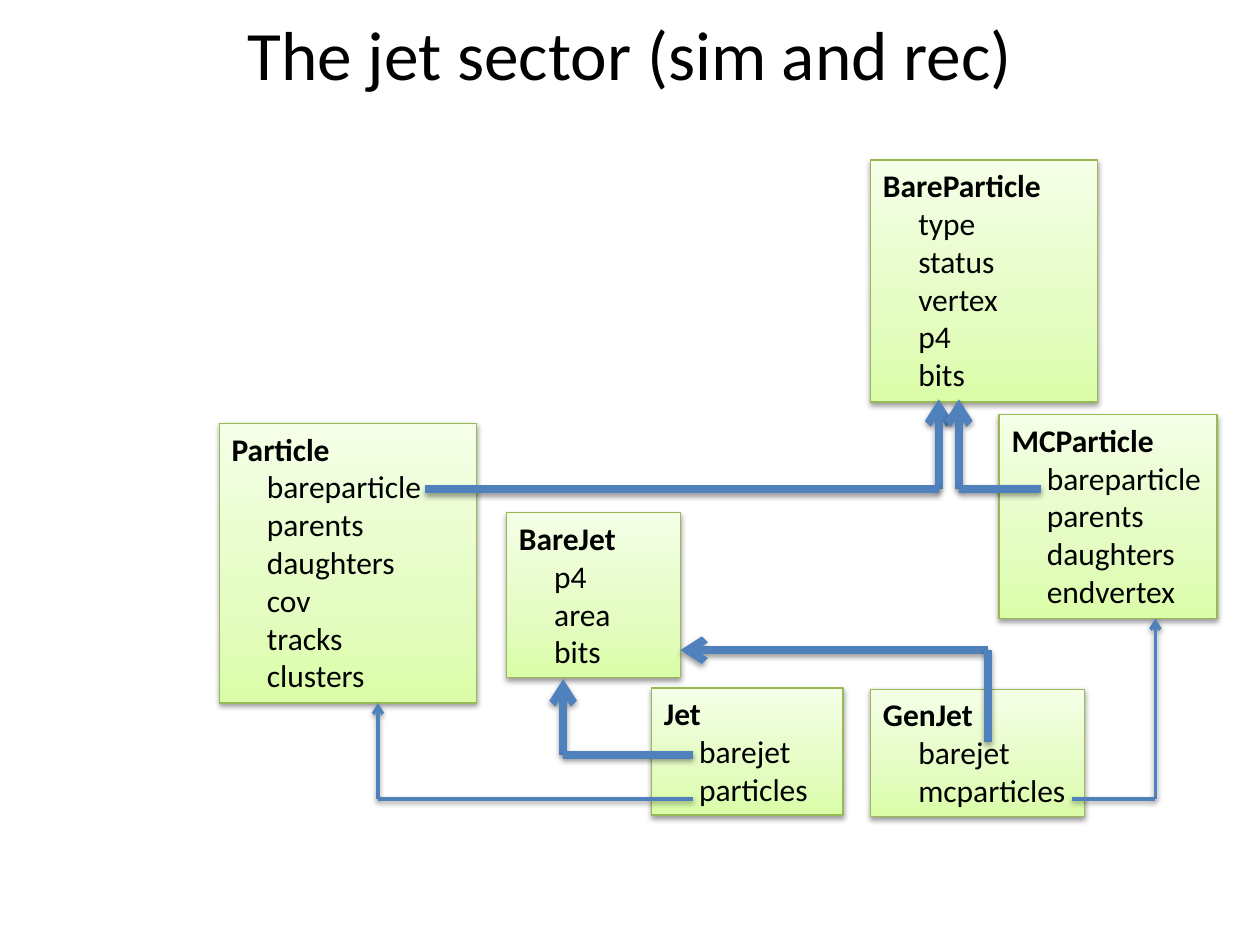
from dataclasses import dataclass

from lxml.etree import SubElement
from pptx import Presentation
from pptx.dml.color import RGBColor
from pptx.enum.shapes import MSO_CONNECTOR, MSO_SHAPE
from pptx.enum.text import MSO_ANCHOR, MSO_AUTO_SIZE, PP_ALIGN
from pptx.oxml.ns import qn
from pptx.util import Inches, Pt

FONT = "Calibri"
BLACK = "000000"
BOX_BORDER = "98B955"
ARROW_BLUE = "4F81BD"
GRADIENT = ((0, "DAFDA7"), (35, "E4FCC2"), (100, "F5FFE7"))
MEMBER_INDENT = 0.28
THICK = 4.5
THIN = 2


@dataclass
class ClassBox:
    name: str
    left: float
    top: float
    width: float
    height: float
    members: tuple[str, ...]


@dataclass
class Relation:
    tip: tuple[float, float]
    corner: tuple[float, float]
    source: tuple[float, float]
    weight: float


CLASS_BOXES = (
    ClassBox("Particle", 1.74, 3.36, 2.04, 2.22,
             ("bareparticle", "parents", "daughters", "cov", "tracks", "clusters")),
    ClassBox("BareParticle", 6.91, 1.27, 1.8, 1.92,
             ("type", "status", "vertex", "p4", "bits")),
    ClassBox("Jet", 5.17, 5.46, 1.52, 1.01, ("barejet", "particles")),
    ClassBox("BareJet", 4.02, 4.07, 1.38, 1.31, ("p4", "area", "bits")),
    ClassBox("MCParticle", 7.93, 3.29, 1.73, 1.62,
             ("bareparticle", "parents", "daughters", "endvertex")),
    ClassBox("GenJet", 6.91, 5.47, 1.7, 1.01, ("barejet", "mcparticles")),
)

RELATIONS = (
    Relation((7.45, 3.17), (7.45, 3.88), (3.37, 3.88), THICK),
    Relation((4.47, 5.39), (4.47, 5.99), (5.5, 5.99), THICK),
    Relation((7.61, 3.17), (7.61, 3.88), (8.26, 3.88), THICK),
    Relation((3, 5.58), (3, 6.34), (5.5, 6.34), THIN),
    Relation((9.17, 4.91), (9.17, 6.34), (8.51, 6.34), THIN),
    Relation((5.4, 5.16), (7.84, 5.16), (7.84, 5.89), THICK),
)


def color(value: str) -> RGBColor:
    return RGBColor.from_string(value)


def add_shadow(properties) -> None:
    effects = SubElement(properties, qn("a:effectLst"))
    shadow = SubElement(effects, qn("a:outerShdw"), blurRad="40000",
                        dist="20000", dir="5400000", rotWithShape="0")
    shade = SubElement(shadow, qn("a:srgbClr"), val=BLACK)
    SubElement(shade, qn("a:alpha"), val="38000")


def fill_gradient(shape) -> None:
    shape.fill.gradient()
    shape.fill.gradient_angle = 90
    stops = shape._element.spPr.find(".//" + qn("a:gsLst"))
    for stop in list(stops):
        stops.remove(stop)
    for position, value in GRADIENT:
        stop = SubElement(stops, qn("a:gs"), pos=str(position * 1000))
        SubElement(stop, qn("a:srgbClr"), val=value)


def add_text(para, text: str, size: float, bold: bool = False) -> None:
    span = para.add_run()
    span.text = text
    span.font.name = FONT
    span.font.size = Pt(size)
    span.font.bold = bold
    span.font.color.rgb = color(BLACK)


def add_class_box(page, item: ClassBox) -> None:
    box = page.shapes.add_shape(
        MSO_SHAPE.RECTANGLE, Inches(item.left), Inches(item.top),
        Inches(item.width), Inches(item.height))
    fill_gradient(box)
    box.line.color.rgb = color(BOX_BORDER)
    box.line.width = Pt(0.75)
    add_shadow(box._element.spPr)
    frame = box.text_frame
    frame.word_wrap = True
    frame.auto_size = MSO_AUTO_SIZE.SHAPE_TO_FIT_TEXT
    frame.vertical_anchor = MSO_ANCHOR.TOP
    heading = frame.paragraphs[0]
    heading.alignment = PP_ALIGN.LEFT
    add_text(heading, item.name, 18, bold=True)
    for member in item.members:
        para = frame.add_paragraph()
        para.alignment = PP_ALIGN.LEFT
        para._p.get_or_add_pPr().set("marL", str(Inches(MEMBER_INDENT)))
        add_text(para, member, 18)


def add_segment(page, start: tuple[float, float], end: tuple[float, float],
                weight: float, arrow: bool = False) -> None:
    segment = page.shapes.add_connector(
        MSO_CONNECTOR.STRAIGHT, *map(Inches, start + end))
    segment.line.color.rgb = color(ARROW_BLUE)
    segment.line.width = Pt(weight)
    properties = segment._element.spPr
    if arrow:
        SubElement(properties.find(qn("a:ln")), qn("a:headEnd"), type="arrow")
    add_shadow(properties)


def add_relation(page, relation: Relation) -> None:
    add_segment(page, relation.tip, relation.corner, relation.weight, arrow=True)
    add_segment(page, relation.corner, relation.source, relation.weight)


def add_title(page, text: str) -> None:
    title = page.shapes.title
    title.left, title.top = Inches(0.5), Inches(0)
    title.width, title.height = Inches(9), Inches(0.83)
    frame = title.text_frame
    frame.vertical_anchor = MSO_ANCHOR.MIDDLE
    frame.paragraphs[0].alignment = PP_ALIGN.CENTER
    add_text(frame.paragraphs[0], text, 39.6)


def main() -> None:
    deck = Presentation()
    deck.slide_width, deck.slide_height = Inches(10), Inches(7.5)
    page = deck.slides.add_slide(deck.slide_layouts[5])
    add_title(page, "The jet sector (sim and rec)")
    for item in CLASS_BOXES:
        add_class_box(page, item)
    for relation in RELATIONS:
        add_relation(page, relation)
    deck.save("out.pptx")


if __name__ == "__main__":
    main()
